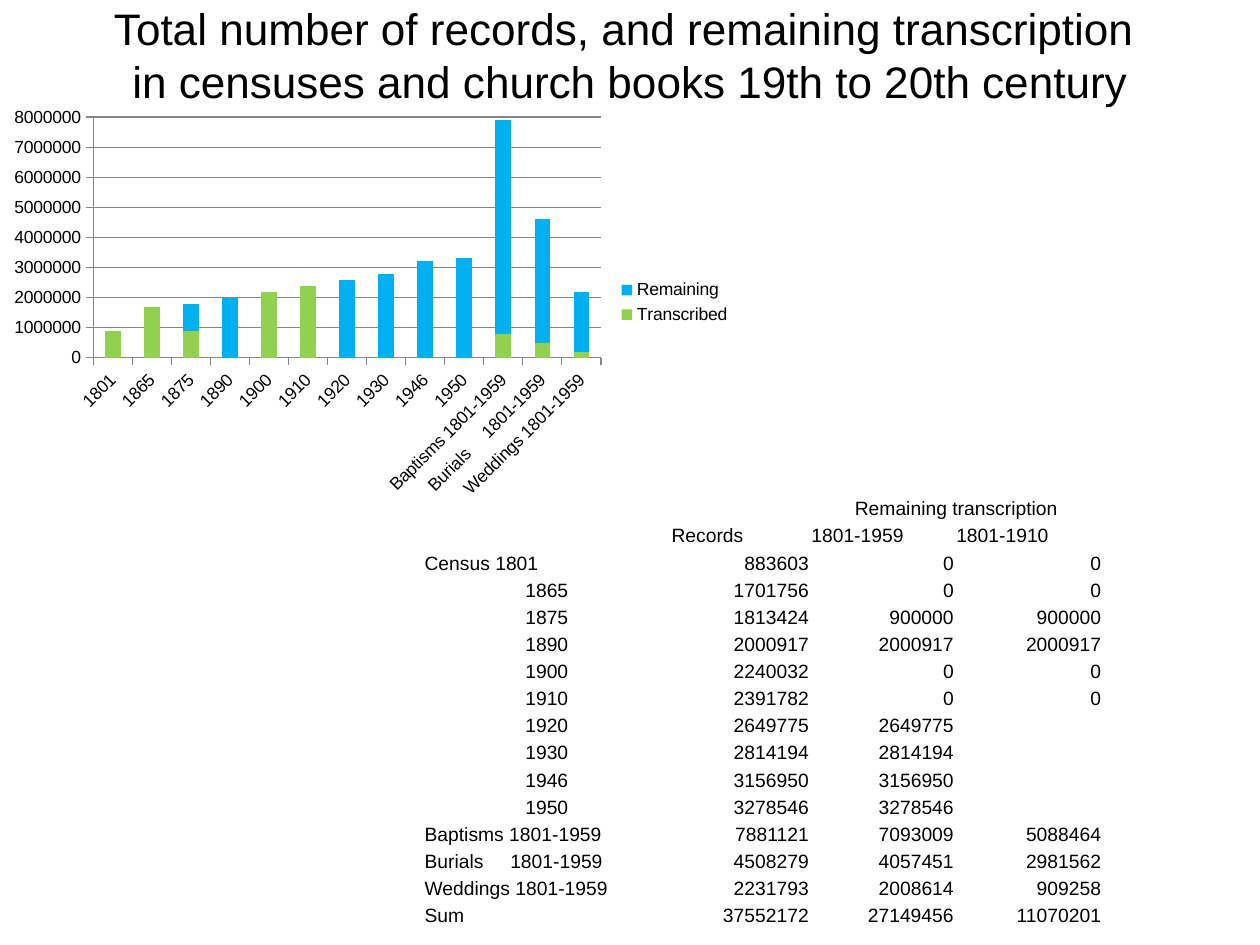
from dataclasses import dataclass

from lxml.etree import SubElement
from pptx import Presentation
from pptx.chart.data import CategoryChartData
from pptx.dml.color import RGBColor
from pptx.enum.chart import XL_CHART_TYPE, XL_LEGEND_POSITION, XL_TICK_MARK
from pptx.enum.text import MSO_ANCHOR, PP_ALIGN
from pptx.oxml.ns import qn
from pptx.util import Inches, Pt


@dataclass(frozen=True)
class Theme:
    font: str = "Arial"
    ink: RGBColor = RGBColor(0, 0, 0)
    grid: RGBColor = RGBColor(0x86, 0x86, 0x86)
    done: RGBColor = RGBColor(0x92, 0xD0, 0x50)
    rest: RGBColor = RGBColor(0x00, 0xB0, 0xF0)
    title: float = 25.2
    table: float = 11
    chart: float = 10


THEME = Theme()
WIDE, HIGH = Inches(10), Inches(7.5)
TITLE = ("Total number of records, and remaining transcription \v"
         "in censuses and church books 19th to 20th century")
GROUP = "Remaining transcription"
HEADS = ["Records", "1801-1959", "1801-1910"]
# label, records, remaining 1801-1959, remaining 1801-1910
ROWS = [
    ("Census 1801", 883603, 0, 0),
    ("1865", 1701756, 0, 0),
    ("1875", 1813424, 900000, 900000),
    ("1890", 2000917, 2000917, 2000917),
    ("1900", 2240032, 0, 0),
    ("1910", 2391782, 0, 0),
    ("1920", 2649775, 2649775, ""),
    ("1930", 2814194, 2814194, ""),
    ("1946", 3156950, 3156950, ""),
    ("1950", 3278546, 3278546, ""),
    ("Baptisms 1801-1959", 7881121, 7093009, 5088464),
    ("Burials\t1801-1959", 4508279, 4057451, 2981562),
    ("Weddings 1801-1959", 2231793, 2008614, 909258),
]
SUM = ("Sum", 37552172, 27149456, 11070201)
COLS = [1.96, 1.11, 1.15, 1.17]
TAB = 0.68
CHART_W, CHART_H = 5.9, 3.24
PLOT = {"x": 0.74 / CHART_W, "y": 0.15 / CHART_H,
        "w": 4.03 / CHART_W, "h": 1.91 / CHART_H}


def style(font, size):
    font.name, font.size = THEME.font, Pt(size)
    font.color.rgb = THEME.ink


def add_title(slide):
    box = slide.shapes.title
    box.left, box.top, box.width, box.height = Inches(0.5), 0, Inches(9), Inches(0.86)
    frame = box.text_frame
    frame.text = TITLE
    frame.word_wrap = True
    frame.vertical_anchor = MSO_ANCHOR.MIDDLE
    para = frame.paragraphs[0]
    para.alignment = PP_ALIGN.CENTER
    for run in para.runs:
        style(run.font, THEME.title)


def fill_cell(cell, value, align):
    cell.fill.background()
    cell.vertical_anchor = MSO_ANCHOR.BOTTOM
    cell.margin_left = cell.margin_right = cell.margin_top = Inches(0.01)
    cell.margin_bottom = 0
    para = cell.text_frame.paragraphs[0]
    para.text = str(value)
    para.alignment = align
    for run in para.runs:
        style(run.font, THEME.table)
    if not para.runs:  # keeps an empty cell as low as its row
        SubElement(para._p, qn("a:endParaRPr"), sz=str(THEME.table * 100))
    if "\t" in para.text:
        tabs = SubElement(para._p.get_or_add_pPr(), qn("a:tabLst"))
        SubElement(tabs, qn("a:tab"), pos=str(Inches(TAB)), algn="l")


def add_table(slide):
    grid = [("", "", GROUP, ""), ("", *HEADS), *ROWS, SUM]
    table = slide.shapes.add_table(len(grid), len(COLS), Inches(3.36), Inches(3.91),
                                   Inches(sum(COLS)), Inches(3.45)).table
    table.first_row = table.horz_banding = False
    for col, width in zip(table.columns, COLS):
        col.width = Inches(width)
    for r, row in enumerate(grid):
        for c, value in enumerate(row):
            align = PP_ALIGN.LEFT
            if value == GROUP or c == 0 and value.isdigit():
                align = PP_ALIGN.CENTER
            elif isinstance(value, int):
                align = PP_ALIGN.RIGHT
            fill_cell(table.cell(r, c), value, align)
    table.cell(0, 2).merge(table.cell(0, 3))


def set_plot(chart):
    """Fix the inner plot area as shares of the chart's size."""
    area = chart._chartSpace.chart.plotArea
    for old in area.findall(qn("c:layout")):
        area.remove(old)
    layout = SubElement(area, qn("c:layout"))
    area.insert(0, layout)
    manual = SubElement(layout, qn("c:manualLayout"))
    SubElement(manual, qn("c:layoutTarget"), val="inner")
    for key in "xy":
        SubElement(manual, qn(f"c:{key}Mode"), val="edge")
    for key, share in PLOT.items():
        SubElement(manual, qn(f"c:{key}"), val=str(share))


def add_chart(slide):
    data = CategoryChartData()
    # axis labels have no tab stops
    data.categories = [row[0].replace("Census ", "").replace("\t", " " * 5) for row in ROWS]
    data.add_series("Transcribed", [round(total - rest, -5) for _, total, rest, _ in ROWS])
    data.add_series("Remaining", [round(rest, -5) for _, _, rest, _ in ROWS])
    chart = slide.shapes.add_chart(XL_CHART_TYPE.COLUMN_STACKED, 0, Inches(0.78),
                                   Inches(CHART_W), Inches(CHART_H), data).chart
    style(chart.font, THEME.chart)
    chart.has_title = False
    chart.has_legend = True
    chart.legend.position = XL_LEGEND_POSITION.RIGHT
    chart.legend.include_in_layout = False
    plot = chart.plots[0]
    plot.gap_width, plot.overlap = 150, 100
    for series, color in zip(plot.series, (THEME.done, THEME.rest)):
        series.format.fill.solid()
        series.format.fill.fore_color.rgb = color
    values, cats = chart.value_axis, chart.category_axis
    values.minimum_scale, values.maximum_scale, values.major_unit = 0, 8000000, 1000000
    values.has_major_gridlines = True
    values.tick_labels.number_format = "0"
    values.tick_labels.number_format_is_linked = False
    for axis in (values, cats):
        axis.major_tick_mark = XL_TICK_MARK.OUTSIDE
        style(axis.tick_labels.font, THEME.chart)
    for part in (values, cats, values.major_gridlines):
        part.format.line.color.rgb = THEME.grid
        part.format.line.width = Pt(0.75)
    cats._element.txPr.find(qn("a:bodyPr")).set("rot", str(-45 * 60000))
    set_plot(chart)


def main():
    deck = Presentation()
    deck.slide_width, deck.slide_height = WIDE, HIGH
    slide = deck.slides.add_slide(deck.slide_layouts[5])
    add_title(slide)
    add_table(slide)
    add_chart(slide)
    deck.save("out.pptx")


if __name__ == "__main__":
    main()
